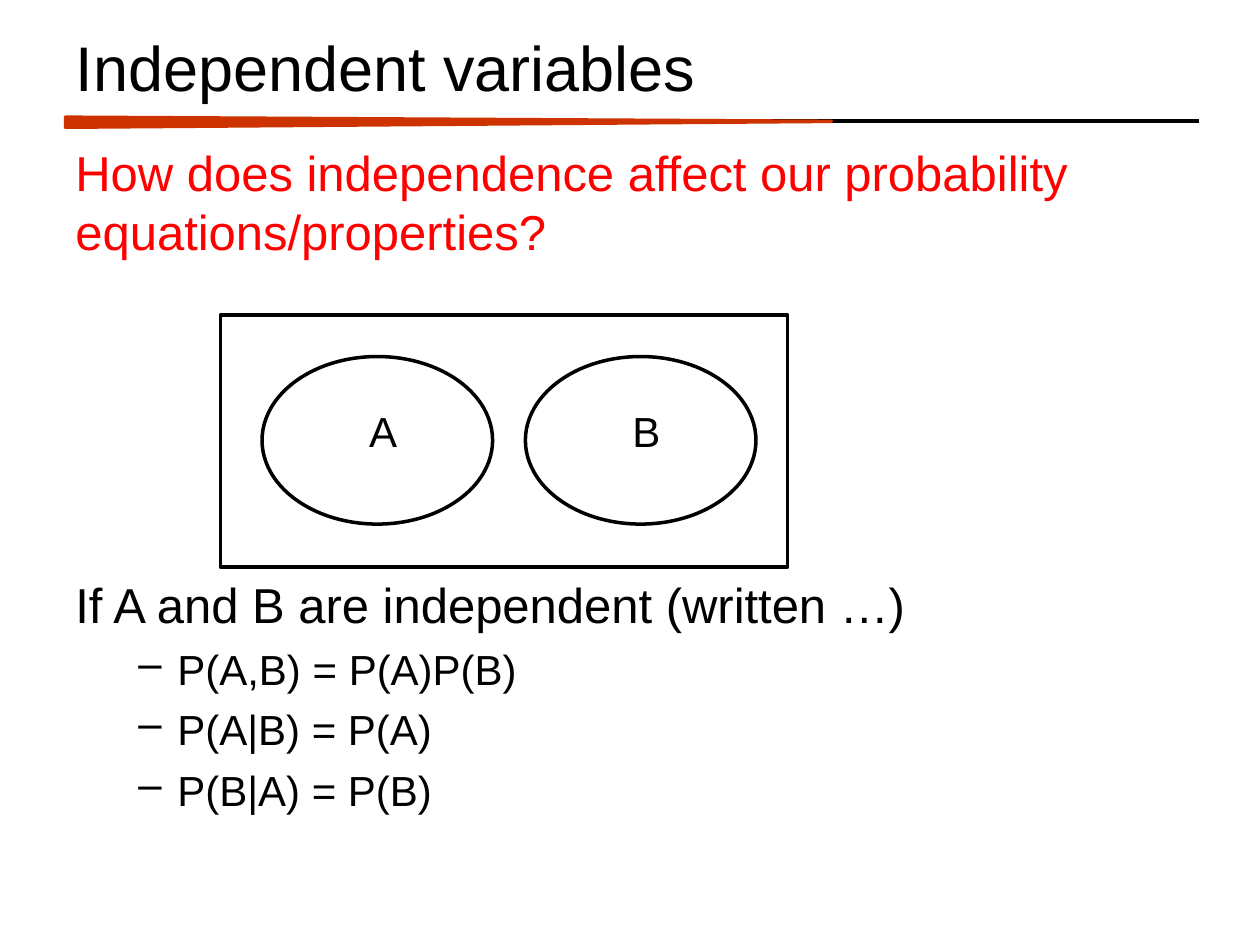
from dataclasses import dataclass

from lxml import etree
from pptx import Presentation
from pptx.dml.color import RGBColor
from pptx.enum.shapes import MSO_CONNECTOR, MSO_SHAPE
from pptx.enum.text import MSO_ANCHOR, MSO_AUTO_SIZE, PP_ALIGN
from pptx.oxml.ns import qn
from pptx.util import Inches, Pt

RECTANGLE, OVAL, TRIANGLE = MSO_SHAPE.RECTANGLE, MSO_SHAPE.OVAL, MSO_SHAPE.ISOSCELES_TRIANGLE
STRAIGHT = MSO_CONNECTOR.STRAIGHT
MIDDLE, TOP = MSO_ANCHOR.MIDDLE, MSO_ANCHOR.TOP
LEFT, CENTER = PP_ALIGN.LEFT, PP_ALIGN.CENTER
NO_AUTO_SIZE = MSO_AUTO_SIZE.NONE
TITLE_ONLY = 5


@dataclass
class Theme:
    font: str = "Arial"
    ink: RGBColor = RGBColor(0, 0, 0)
    accent: RGBColor = RGBColor(0xCC, 0x33, 0x00)
    question: RGBColor = RGBColor(0xFF, 0, 0)
    title_size: int = 36
    body_size: int = 28
    detail_size: int = 24
    line_width: int = 2


class SlideBuilder:
    def __init__(self, slide, theme):
        self.slide = slide
        self.theme = theme

    def format_text(self, paragraph, size, color, alignment=LEFT, space_before=0):
        paragraph.alignment = alignment
        paragraph.space_before = Pt(space_before)
        for run in paragraph.runs:
            run.font.name = self.theme.font
            run.font.size = Pt(size)
            run.font.color.rgb = color

    def title(self, text, left, top, width, height):
        title = self.slide.shapes.title
        title.left, title.top = Inches(left), Inches(top)
        title.width, title.height = Inches(width), Inches(height)
        frame = title.text_frame
        frame.text = text
        frame.auto_size = NO_AUTO_SIZE
        frame.vertical_anchor = MIDDLE
        self.format_text(frame.paragraphs[0], self.theme.title_size, self.theme.ink)

    def text_box(self, left, top, width, height, parent=None):
        shapes = (parent or self.slide).shapes
        box = shapes.add_textbox(Inches(left), Inches(top), Inches(width), Inches(height))
        box.text_frame.word_wrap = True
        box.text_frame.vertical_anchor = TOP
        return box.text_frame

    def bullet(self, paragraph, character, margin, indent):
        properties = paragraph._p.get_or_add_pPr()
        properties.set("marL", str(Inches(margin)))
        properties.set("indent", str(Inches(indent)))
        etree.SubElement(properties, qn("a:buChar")).set("char", character)

    def shape(self, kind, left, top, width, height, color, fill=None, parent=None):
        shapes = (parent or self.slide).shapes
        shape = shapes.add_shape(kind, Inches(left), Inches(top), Inches(width), Inches(height))
        shape.shadow.inherit = False
        if fill is None:
            shape.fill.background()
        else:
            shape.fill.solid()
            shape.fill.fore_color.rgb = fill
        shape.line.color.rgb = color
        shape.line.width = Pt(self.theme.line_width)
        return shape

    def horizontal_line(self, left, right, height):
        line = self.slide.shapes.add_connector(
            STRAIGHT, Inches(left), Inches(height), Inches(right), Inches(height))
        line.line.color.rgb = self.theme.ink
        line.line.width = Pt(self.theme.line_width)
        etree.SubElement(line._element.spPr, qn("a:effectLst"))


def main():
    presentation = Presentation()
    presentation.slide_width, presentation.slide_height = Inches(10), Inches(7.5)
    slide = presentation.slides.add_slide(presentation.slide_layouts[TITLE_ONLY])
    theme = Theme()
    builder = SlideBuilder(slide, theme)

    # Title with a tapering rule below it
    builder.horizontal_line(0.52, 9.52, 0.96)
    wedge = builder.shape(TRIANGLE, 3.52, -2.07, 0.08, 6.08, theme.accent, theme.accent)
    wedge.adjustments[0] = 0.417
    wedge.rotation = 90
    builder.title("Independent variables", 0.5, 0.17, 9, 0.72)

    # Question above the diagram, conclusion below it
    body = builder.text_box(0.5, 1.08, 9, 5.62)
    question = body.paragraphs[0]
    question.text = "How does independence affect our probability equations/properties?"
    builder.format_text(question, theme.body_size, theme.question, space_before=5.6)
    conclusion = body.add_paragraph()
    conclusion.text = "If A and B are independent (written …)"
    builder.format_text(conclusion, theme.body_size, theme.ink, space_before=180)

    for equation in ("P(A,B) = P(A)P(B)", "P(A|B) = P(A)", "P(B|A) = P(B)"):
        paragraph = body.add_paragraph()
        paragraph.text = equation
        paragraph.level = 1
        builder.format_text(paragraph, theme.detail_size, theme.ink, space_before=5.6)
        builder.bullet(paragraph, "–", 0.81, -0.31)

    # Diagram of two separate events in a sample space
    diagram = slide.shapes.add_group_shape()
    builder.shape(RECTANGLE, 1.75, 2.5, 4.5, 2, theme.ink, parent=diagram)
    for event, left in (("A", 2.08), ("B", 4.17)):
        builder.shape(OVAL, left, 2.83, 1.83, 1.33, theme.ink, parent=diagram)
        label = builder.text_box(left + 0.67, 3.17, 0.58, 0.5, parent=diagram)
        label.text = event
        builder.format_text(label.paragraphs[0], theme.detail_size, theme.ink, CENTER)

    presentation.save("out.pptx")


if __name__ == "__main__":
    main()
